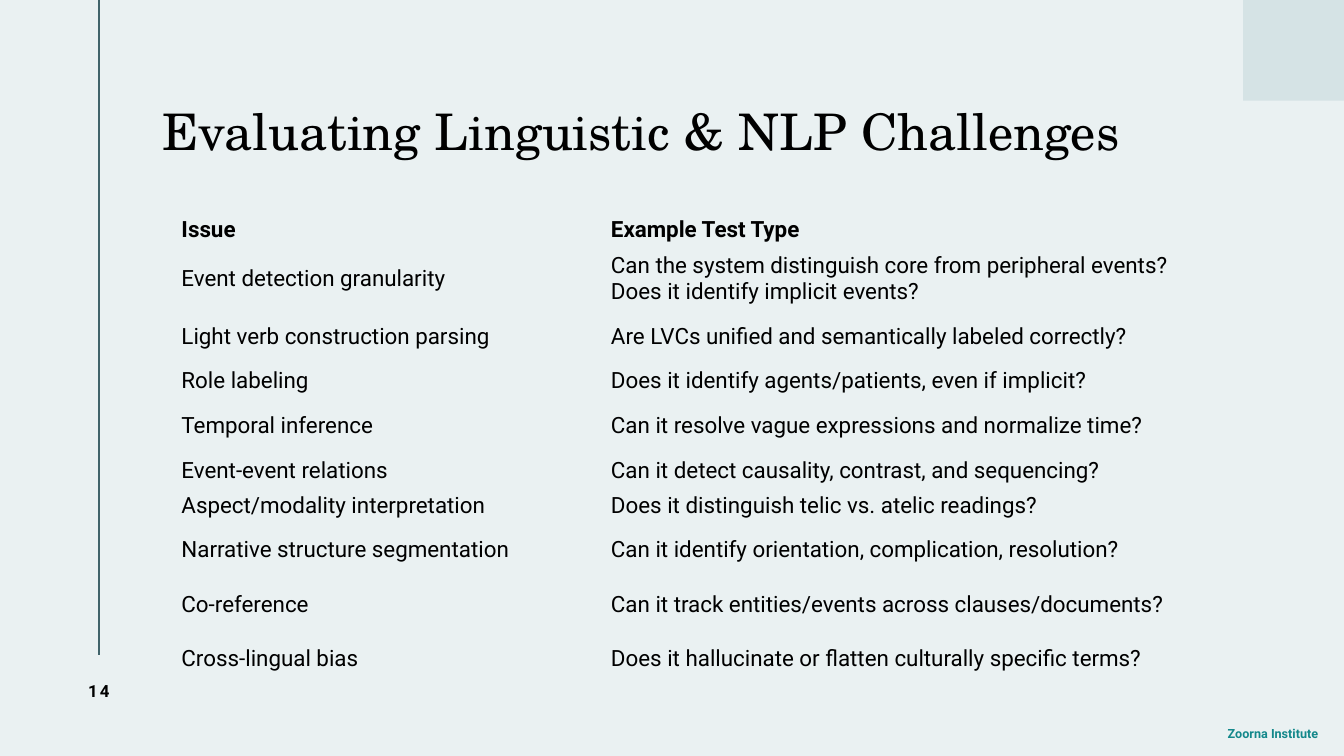
from lxml import etree
from pptx import Presentation
from pptx import util as u
from pptx.dml.color import RGBColor
from pptx.enum import shapes, text
from pptx.oxml.ns import qn

COLORS = {"background": "EAF1F2", "line": "40636A", "corner": "D5E3E5",
          "text": "000000", "footer": "13888B"}
NO_TABLE_STYLE = "{2D5ABB26-0587-4C30-8999-92F81FD0307C}"
TALL, SHORT = 0.54, 0.31
ROWS = [
    (SHORT, "Issue", "Example Test Type"),
    (TALL, "Event detection granularity",
     "Can the system distinguish core from peripheral events? Does it identify implicit events?"),
    (TALL, "Light verb construction parsing",
     "Are LVCs unified and semantically labeled correctly?"),
    (SHORT, "Role labeling", "Does it identify agents/patients, even if implicit?"),
    (TALL, "Temporal inference", "Can it resolve vague expressions and normalize time?"),
    (SHORT, "Event-event relations", "Can it detect causality, contrast, and sequencing?"),
    (SHORT, "Aspect/modality interpretation", "Does it distinguish telic vs. atelic readings?"),
    (TALL, "Narrative structure segmentation",
     "Can it identify orientation, complication, resolution?"),
    (TALL, "Co-reference", "Can it track entities/events across clauses/documents?"),
    (TALL, "Cross-lingual bias", "Does it hallucinate or flatten culturally specific terms?"),
]


def color(name):
    return RGBColor.from_string(COLORS[name])


def write(frame, words, size, font="Roboto", ink="text", bold=False,
          align=text.PP_ALIGN.LEFT, line_spacing=None, tracking=None):
    """Fill a text frame with one formatted paragraph; tracking is in points."""
    frame.word_wrap = True
    para = frame.paragraphs[0]
    para.alignment = align
    para.line_spacing = line_spacing
    span = para.add_run()
    span.text = words
    span.font.size = u.Pt(size)
    span.font.name = font
    span.font.bold = bold
    span.font.color.rgb = color(ink)
    if tracking:
        span.font._element.set("spc", str(int(tracking * 100)))


class SlideBuilder:
    def __init__(self, deck):
        self.page = deck.slides.add_slide(deck.slide_layouts[5])
        fill = self.page.background.fill
        fill.solid()
        fill.fore_color.rgb = color("background")

    def title(self, words, *place):
        box = self.page.shapes.title
        box.left, box.top, box.width, box.height = map(u.Inches, place)
        frame = box.text_frame
        frame.margin_left = 0
        frame.vertical_anchor = text.MSO_ANCHOR.MIDDLE
        write(frame, words, 36, font="TeX Gyre Schola", line_spacing=0.9)

    def label(self, words, *place, **style):
        box = self.page.shapes.add_textbox(*map(u.Inches, place))
        box.text_frame.vertical_anchor = text.MSO_ANCHOR.MIDDLE
        write(box.text_frame, words, bold=True, align=text.PP_ALIGN.CENTER, **style)
        return box

    def rectangle(self, fill, *place):
        box = self.page.shapes.add_shape(shapes.MSO_SHAPE.RECTANGLE, *map(u.Inches, place))
        box.shadow.inherit = False
        box.fill.solid()
        box.fill.fore_color.rgb = color(fill)
        box.line.fill.background()

    def line(self, *ends):
        rule = self.page.shapes.add_connector(
            shapes.MSO_CONNECTOR.STRAIGHT, *map(u.Inches, ends))
        rule.line.color.rgb = color("line")
        rule.line.width = u.Pt(1.5)
        etree.SubElement(rule._element.spPr, qn("a:effectLst"))

    def table(self, rows, widths, left, top):
        height = sum(row[0] for row in rows)
        grid = self.page.shapes.add_table(
            len(rows), len(widths), u.Inches(left), u.Inches(top),
            u.Inches(sum(widths)), u.Inches(height)).table
        grid.first_row = grid.horz_banding = False
        grid._tbl.tblPr.find(qn("a:tableStyleId")).text = NO_TABLE_STYLE
        for column, width in zip(grid.columns, widths):
            column.width = u.Inches(width)
        for index, (row_height, *entries) in enumerate(rows):
            grid.rows[index].height = u.Inches(row_height)
            for cell, words in zip(grid.rows[index].cells, entries):
                cell.fill.background()
                cell.vertical_anchor = text.MSO_ANCHOR.MIDDLE
                cell.margin_left = cell.margin_right = u.Inches(0.08)
                cell.margin_top = cell.margin_bottom = u.Inches(0.04)
                write(cell.text_frame, words, 16, bold=index == 0)


def main():
    deck = Presentation()
    deck.slide_width, deck.slide_height = u.Inches(13.33), u.Inches(7.5)
    slide = SlideBuilder(deck)
    footer = slide.label("Zoorna Institute", 12.05, 7.18, 1.15, 0.2, size=9, ink="footer")
    frame = footer.text_frame
    frame.margin_left = frame.margin_right = frame.margin_top = frame.margin_bottom = 0
    slide.line(0.98, 0, 0.98, 6.5)
    slide.rectangle("corner", 12.33, 0, 1, 1)
    slide.title("Evaluating Linguistic & NLP Challenges", 1.61, 0.55, 10.01, 1.56)
    slide.table(ROWS, (4.26, 5.74), 1.72, 2.11)
    slide.label("14", 0.45, 6.5, 1.06, 0.71, size=12, tracking=1.5)
    deck.save("out.pptx")


if __name__ == "__main__":
    main()
